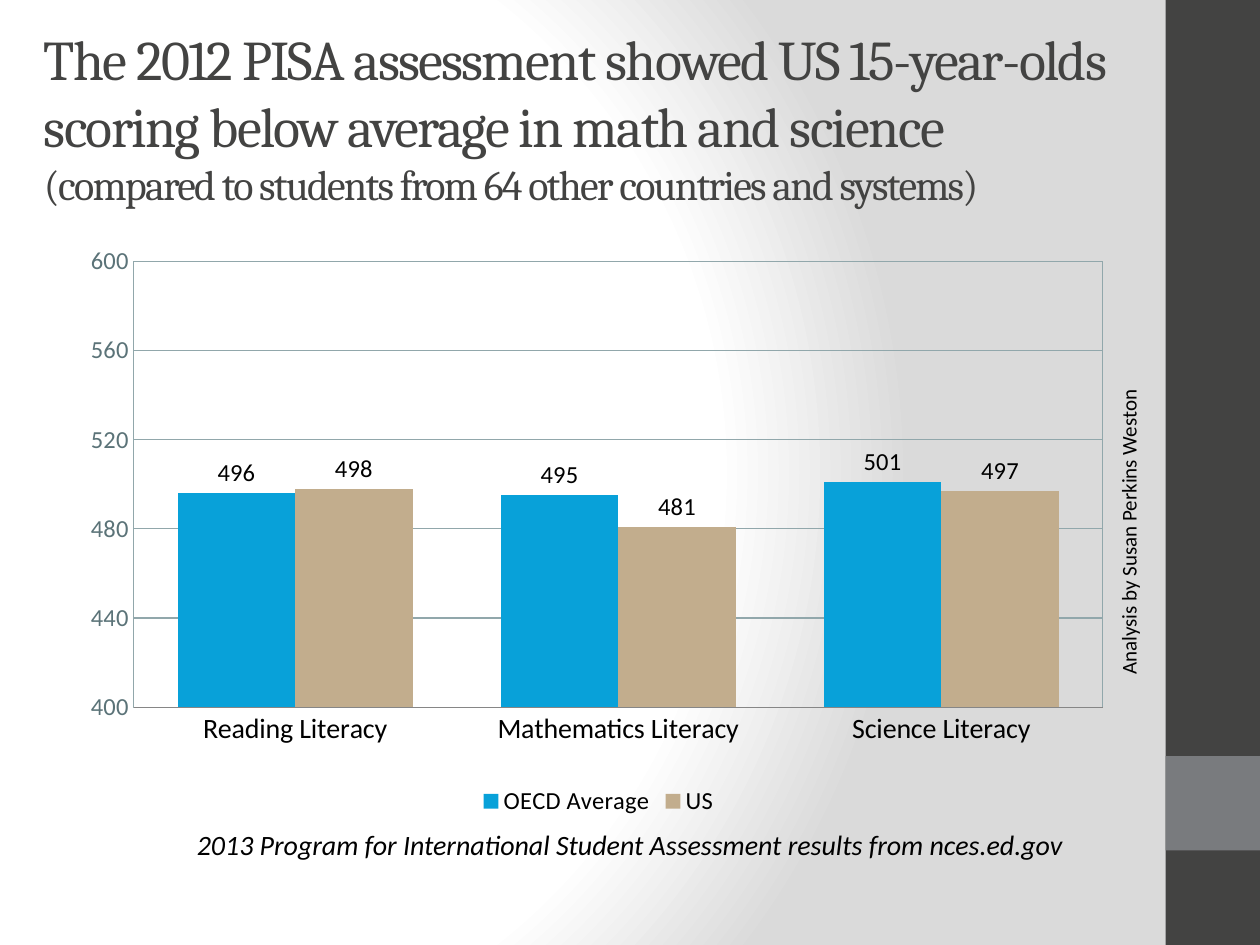
from lxml import etree
from pptx import Presentation
from pptx.chart.data import CategoryChartData
from pptx.dml.color import RGBColor
from pptx.enum.chart import XL_CHART_TYPE, XL_LABEL_POSITION, XL_LEGEND_POSITION, XL_TICK_MARK
from pptx.enum.shapes import MSO_SHAPE
from pptx.enum.text import MSO_ANCHOR, PP_ALIGN
from pptx.oxml import parse_xml
from pptx.oxml.ns import qn
from pptx.util import Inches, Pt

COLUMNS = XL_CHART_TYPE.COLUMN_CLUSTERED
OUTSIDE_END = XL_LABEL_POSITION.OUTSIDE_END
LEGEND_BOTTOM = XL_LEGEND_POSITION.BOTTOM
NO_TICK = XL_TICK_MARK.NONE
RECTANGLE = MSO_SHAPE.RECTANGLE
TOP, MIDDLE = MSO_ANCHOR.TOP, MSO_ANCHOR.MIDDLE
LEFT, CENTER, RIGHT = PP_ALIGN.LEFT, PP_ALIGN.CENTER, PP_ALIGN.RIGHT

COLORS = {
    "white": "FFFFFF",
    "shade": "DADADA",
    "dark": "434342",
    "accent": "797B7E",
    "text": "000000",
    "scale": "5B7378",
    "grid": "91A7AB",
    "base": "868686",
    "oecd": "08A1D9",
    "us": "C2AD8D",
}
A_NS = "http://schemas.openxmlformats.org/drawingml/2006/main"
SUBJECTS = ["Reading Literacy", "Mathematics Literacy", "Science Literacy"]
SCORES = [
    ("OECD Average", "oecd", [496, 495, 501]),
    ("US", "us", [498, 481, 497]),
]


def rgb(name):
    return RGBColor.from_string(COLORS[name])


def style_font(font, size, color, face="Calibri"):
    font.size = Pt(size)
    font.name = face
    font.color.rgb = rgb(color)


def set_background(slide):
    fill = slide.background.fill
    fill.gradient()
    stops = "".join(
        f'<a:gs pos="{position * 1000}"><a:srgbClr val="{COLORS[name]}"/></a:gs>'
        for position, name in [(0, "white"), (75, "white"), (100, "shade")]
    )
    gradient = parse_xml(
        f'<a:gradFill xmlns:a="{A_NS}" rotWithShape="1"><a:gsLst>{stops}</a:gsLst>'
        '<a:path path="circle">'
        '<a:fillToRect l="20000" t="50000" r="100000" b="50000"/>'
        "</a:path></a:gradFill>"
    )
    current = next(slide.element.iter(qn("a:gradFill")))
    current.getparent().replace(current, gradient)


def add_band(slide, top, height, color):
    band = slide.shapes.add_shape(
        RECTANGLE, Inches(9.25), Inches(top), Inches(0.75), Inches(height)
    )
    band.shadow.inherit = False
    band.fill.solid()
    band.fill.fore_color.rgb = rgb(color)
    band.line.fill.background()


def add_text(slide, box, text, size, color="text", face="Calibri",
             align=LEFT, anchor=TOP, italic=None, rotation=0):
    label = slide.shapes.add_textbox(*map(Inches, box))
    label.rotation = rotation
    frame = label.text_frame
    frame.word_wrap = True
    frame.vertical_anchor = anchor
    paragraph = frame.paragraphs[0]
    paragraph.text = text
    paragraph.alignment = align
    for run in paragraph.runs:
        style_font(run.font, size, color, face)
        run.font.italic = italic
    return paragraph


def add_title(slide):
    title = add_text(
        slide, (0.25, 0.3, 8.91, 1.25),
        "The 2012 PISA assessment showed US 15-year-olds scoring below average "
        "in math and science\v(compared to students from 64 other countries and systems)",
        32, "dark", "Cambria", anchor=MIDDLE,
    )
    title.runs[1].font.size = Pt(24)
    for run in title.runs:
        run.font._element.set("spc", "-100")


def set_line(line, color):
    line.color.rgb = rgb(color)
    line.width = Pt(0.75)


def frame_plot(chart):
    plot_area = next(chart.element.iter(qn("c:plotArea")))
    for layout in plot_area.findall(qn("c:layout")):
        plot_area.remove(layout)
    layout = etree.Element(qn("c:layout"))
    manual = etree.SubElement(layout, qn("c:manualLayout"))
    settings = [("layoutTarget", "inner"), ("xMode", "edge"), ("yMode", "edge"),
                ("x", "0.066"), ("y", "0.052"), ("w", "0.905"), ("h", "0.755")]
    for tag, value in settings:
        etree.SubElement(manual, qn(f"c:{tag}")).set("val", value)
    plot_area.insert(0, layout)
    border = etree.SubElement(plot_area, qn("c:spPr"))
    etree.SubElement(border, qn("a:noFill"))
    line = etree.SubElement(border, qn("a:ln"), w=str(Pt(0.75)))
    solid = etree.SubElement(line, qn("a:solidFill"))
    etree.SubElement(solid, qn("a:srgbClr"), val=COLORS["grid"])


def add_score_chart(slide):
    data = CategoryChartData()
    data.categories = SUBJECTS
    for name, _, values in SCORES:
        data.add_series(name, values)
    chart = slide.shapes.add_chart(
        COLUMNS, Inches(0.5), Inches(1.83), Inches(8.5), Inches(4.69), data
    ).chart
    style_font(chart.font, 14, "text")
    chart.has_title = False
    chart.has_legend = True
    chart.legend.position = LEGEND_BOTTOM
    chart.legend.include_in_layout = False
    style_font(chart.legend.font, 14, "text")

    subjects = chart.category_axis
    subjects.major_tick_mark = NO_TICK
    style_font(subjects.tick_labels.font, 16, "text")
    set_line(subjects.format.line, "base")

    scale = chart.value_axis
    scale.minimum_scale, scale.maximum_scale, scale.major_unit = 400, 600, 40
    scale.major_tick_mark = NO_TICK
    style_font(scale.tick_labels.font, 14, "scale")
    set_line(scale.format.line, "grid")
    set_line(scale.major_gridlines.format.line, "grid")

    plot = chart.plots[0]
    plot.gap_width = 75
    plot.vary_by_categories = False
    for series, (_, color, _) in zip(plot.series, SCORES):
        series.format.fill.solid()
        series.format.fill.fore_color.rgb = rgb(color)
        labels = series.data_labels
        labels.show_value = True
        labels.position = OUTSIDE_END
        style_font(labels.font, 14, "text")
    frame_plot(chart)


def main():
    deck = Presentation()
    deck.slide_width, deck.slide_height = Inches(10), Inches(7.5)
    slide = deck.slides.add_slide(deck.slide_layouts[6])
    set_background(slide)
    add_band(slide, 0, 7.5, "dark")
    add_band(slide, 6, 0.75, "accent")
    add_title(slide)
    add_score_chart(slide)
    add_text(slide, (7.66, 4.09, 2.59, 0.4), "Analysis by Susan Perkins Weston",
             12, align=RIGHT, anchor=MIDDLE, rotation=270)
    add_text(slide, (0.5, 6.52, 9, 0.37),
             "2013 Program for International Student Assessment results from nces.ed.gov",
             16, align=CENTER, italic=True)
    deck.save("out.pptx")


if __name__ == "__main__":
    main()
